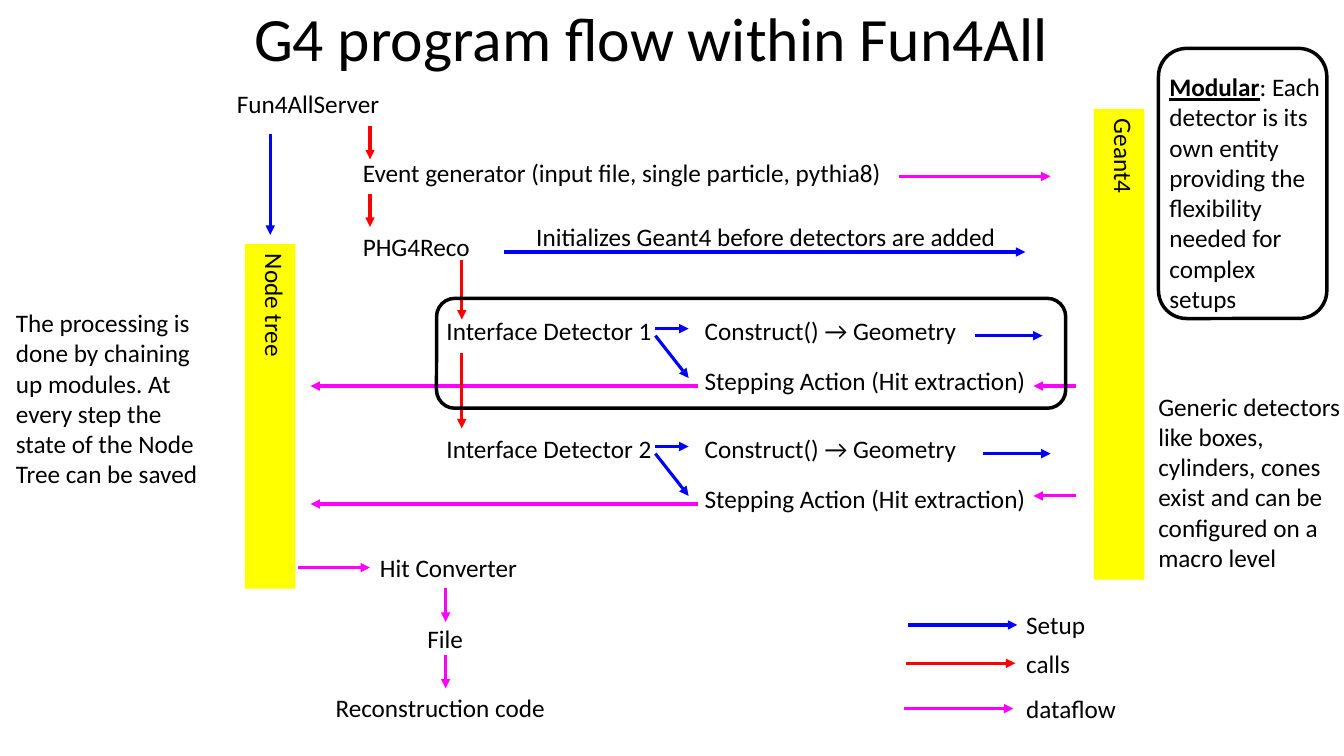
from dataclasses import dataclass

import lxml.etree
import pptx
import pptx.dml.color
import pptx.enum.shapes
import pptx.enum.text
import pptx.oxml.ns
import pptx.presentation
import pptx.shapes.autoshape
import pptx.slide
import pptx.text.text
import pptx.util

Inches = pptx.util.Inches
FONT = "Calibri"
COLOURS = {
    "text": "000000",
    "store": "FFFF00",
    "setup": "0000FF",
    "calls": "FF0000",
    "dataflow": "FF00FF",
}


@dataclass(frozen=True)
class Label:
    text: str
    left: float
    top: float
    width: float
    height: float = 0.4
    wrap: bool = False
    lead: str = ""


@dataclass(frozen=True)
class Arrow:
    flow: str
    x1: float
    y1: float
    x2: float
    y2: float


@dataclass(frozen=True)
class Box:
    left: float
    top: float
    width: float
    height: float
    text: str = ""


@dataclass(frozen=True)
class Detector:
    number: int
    top: float
    geometry_x: float
    step_y: float


STAGES = [
    Label("Fun4AllServer", 2.25, 0.83, 1.69),
    Label("Event generator (input file, single particle, pythia8)", 3.5, 1.51, 5.41),
    Label("PHG4Reco", 3.5, 2.25, 1.27),
    Label("Initializes Geant4 before detectors are added", 5.22, 2.15, 4.81),
    Label("Hit Converter", 3.67, 5.43, 1.58),
    Label("File", 4.14, 6.13, 0.56),
    Label("Reconstruction code", 3.23, 6.82, 2.3),
]
REMARKS = [
    Label(": Each detector is its own entity providing the flexibility needed "
          "for complex setups", 11.5, 0.66, 1.73, 2.52, True, "Modular"),
    Label("Generic detectors like boxes, cylinders, cones exist and can be "
          "configured on a macro level", 11.39, 3.83, 2.07, 1.92, True),
    Label("The processing is done by chaining up modules. At every step the "
          "state of the Node Tree can be saved", 0.06, 3, 2.1, 1.92, True),
]
STAGE_ARROWS = [
    Arrow("setup", 2.68, 1.33, 2.68, 2.33),
    Arrow("setup", 5, 2.5, 10.17, 2.5),
    Arrow("calls", 3.67, 1.25, 3.67, 1.58),
    Arrow("calls", 3.67, 1.92, 3.67, 2.25),
    Arrow("calls", 4.58, 2.58, 4.58, 3.17),
    Arrow("calls", 4.58, 3.5, 4.58, 4.25),
    Arrow("dataflow", 8.92, 1.75, 10.42, 1.75),
    Arrow("dataflow", 2.96, 5.63, 3.67, 5.63),
    Arrow("dataflow", 4.42, 5.83, 4.42, 6.17),
    Arrow("dataflow", 4.42, 6.5, 4.42, 6.83),
]
STORES = [
    Box(2.43, 2.42, 0.5, 3.42, "Node tree"),
    Box(10.85, 1.08, 0.5, 4.67, "Geant4"),
]
FRAMES = [Box(4.33, 2.96, 6.24, 1.09), Box(11.49, 0.48, 1.67, 2.68)]
DETECTORS = [Detector(1, 3.08, 9.67, 3.83), Detector(2, 4.25, 9.75, 4.92)]
LEGEND = [
    ("Setup", "setup", 9.01, 6.2),
    ("calls", "calls", 8.99, 6.58),
    ("dataflow", "dataflow", 8.97, 7.03),
]


def colour(name: str) -> pptx.dml.color.RGBColor:
    return pptx.dml.color.RGBColor.from_string(COLOURS[name])


def format_text(paragraph: pptx.text.text._Paragraph, size: int) -> None:
    paragraph.font.name = FONT
    paragraph.font.size = pptx.util.Pt(size)
    paragraph.font.color.rgb = colour("text")


def draw_label(slide: pptx.slide.Slide, label: Label) -> None:
    frame = slide.shapes.add_textbox(
        Inches(label.left), Inches(label.top), Inches(label.width), Inches(label.height)
    ).text_frame
    frame.word_wrap = label.wrap
    frame.auto_size = pptx.enum.text.MSO_AUTO_SIZE.SHAPE_TO_FIT_TEXT
    paragraph = frame.paragraphs[0]
    if label.lead:
        lead = paragraph.add_run()
        lead.text = label.lead
        lead.font.bold = True
        lead.font.underline = True
    paragraph.add_run().text = label.text
    format_text(paragraph, 18)


def draw_arrow(slide: pptx.slide.Slide, arrow: Arrow) -> None:
    connector = slide.shapes.add_connector(
        pptx.enum.shapes.MSO_CONNECTOR.STRAIGHT,
        Inches(arrow.x1), Inches(arrow.y1), Inches(arrow.x2), Inches(arrow.y2),
    )
    connector.line.color.rgb = colour(arrow.flow)
    connector.line.width = pptx.util.Pt(2.25)
    qn = pptx.oxml.ns.qn
    outline = connector.line._get_or_add_ln()
    lxml.etree.SubElement(outline, qn("a:tailEnd"), type="triangle")
    lxml.etree.SubElement(connector._element.spPr, qn("a:effectLst"))


def draw_box(slide: pptx.slide.Slide, kind: pptx.enum.shapes.MSO_SHAPE,
             box: Box) -> pptx.shapes.autoshape.Shape:
    shape = slide.shapes.add_shape(
        kind, Inches(box.left), Inches(box.top), Inches(box.width), Inches(box.height)
    )
    shape.shadow.inherit = False
    return shape


def draw_store(slide: pptx.slide.Slide, box: Box) -> None:
    store = draw_box(slide, pptx.enum.shapes.MSO_SHAPE.RECTANGLE, box)
    store.fill.solid()
    store.fill.fore_color.rgb = colour("store")
    store.line.fill.background()
    frame = store.text_frame
    frame.text = box.text
    frame.vertical_anchor = pptx.enum.text.MSO_ANCHOR.TOP
    frame.auto_size = pptx.enum.text.MSO_AUTO_SIZE.SHAPE_TO_FIT_TEXT
    frame._txBody.bodyPr.set("vert", "eaVert")
    frame.paragraphs[0].alignment = pptx.enum.text.PP_ALIGN.CENTER
    format_text(frame.paragraphs[0], 18)


def draw_frame(slide: pptx.slide.Slide, box: Box) -> None:
    frame = draw_box(slide, pptx.enum.shapes.MSO_SHAPE.ROUNDED_RECTANGLE, box)
    frame.fill.background()
    frame.line.color.rgb = colour("text")
    frame.line.width = pptx.util.Pt(2.5)


def draw_detector(slide: pptx.slide.Slide, detector: Detector) -> None:
    top = detector.top
    draw_label(slide, Label(f"Interface Detector {detector.number}", 4.33, top, 2.26))
    draw_label(slide, Label("Construct() → Geometry", 6.89, top, 2.74))
    draw_label(slide, Label("Stepping Action (Hit extraction)", 6.89, top + 0.5, 3.44))
    x, y = detector.geometry_x, detector.step_y
    for arrow in (
        Arrow("setup", 6.5, top + 0.18, 6.83, top + 0.18),
        Arrow("setup", 6.5, top + 0.25, 6.83, top + 0.67),
        Arrow("setup", x, top + 0.25, x + 0.67, top + 0.25),
        Arrow("dataflow", 10.67, y, 10.25, y),
        Arrow("dataflow", 6.92, top + 0.75, 3.08, top + 0.75),
    ):
        draw_arrow(slide, arrow)


def draw_title(slide: pptx.slide.Slide) -> None:
    title = slide.shapes.title
    title.left, title.top = Inches(2.42), Inches(-0.21)
    title.width, title.height = Inches(8.5), Inches(1.25)
    title.text_frame.text = "G4 program flow within Fun4All"
    title.text_frame.vertical_anchor = pptx.enum.text.MSO_ANCHOR.MIDDLE
    heading = title.text_frame.paragraphs[0]
    heading.alignment = pptx.enum.text.PP_ALIGN.LEFT
    heading.line_spacing = 0.9
    format_text(heading, 44)


def main() -> None:
    deck: pptx.presentation.Presentation = pptx.Presentation()
    deck.slide_width, deck.slide_height = Inches(13.33), Inches(7.5)
    slide = deck.slides.add_slide(deck.slide_layouts.get_by_name("Title Only"))
    draw_title(slide)
    for store in STORES:
        draw_store(slide, store)
    for label in STAGES + REMARKS:
        draw_label(slide, label)
    for detector in DETECTORS:
        draw_detector(slide, detector)
    for arrow in STAGE_ARROWS:
        draw_arrow(slide, arrow)
    for text, flow, x, y in LEGEND:
        draw_arrow(slide, Arrow(flow, x, y, x + 1.08, y))
        draw_label(slide, Label(text, 10.08, y - 0.2, 1.1))
    for frame in FRAMES:
        draw_frame(slide, frame)
    deck.save("out.pptx")


if __name__ == "__main__":
    main()
